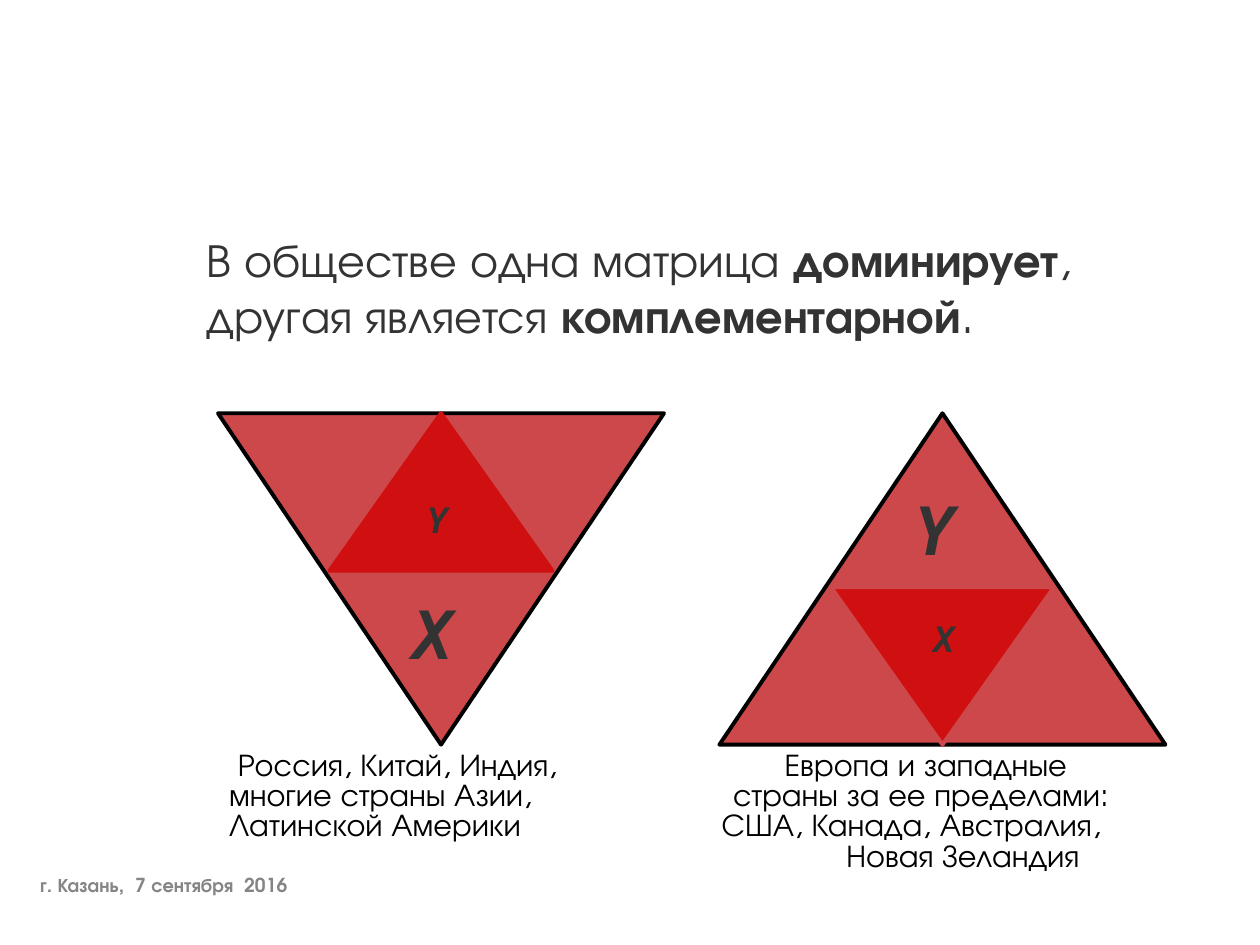
from pptx import Presentation
from pptx.dml.color import RGBColor
from pptx.enum import shapes, text
from pptx import util as u

BLACK = RGBColor(0x00, 0x00, 0x00)
CHARCOAL = RGBColor(0x33, 0x33, 0x33)
GREY = RGBColor(0x85, 0x85, 0x85)
ROSE = RGBColor(0xCC, 0x48, 0x4B)
RED = RGBColor(0xD0, 0x10, 0x10)

SANS = "TeX Gyre Adventor"
MONO = "DejaVu Sans Mono"


class SlideBuilder:
    """Places elements by shares of the slide: percent of width and height."""

    def __init__(self, deck):
        self.deck = deck
        self.page = deck.slides.add_slide(deck.slide_layouts[5])

    def area(self, left, top, width, height):
        across, down = self.deck.slide_width / 100, self.deck.slide_height / 100
        return [u.Emu(round(share * unit)) for share, unit in
                zip((left, top, width, height), (across, down, across, down))]

    def span(self, para, words, size, color, font=SANS, bold=False, italic=False):
        span = para.add_run()
        span.text = words
        span.font.name, span.font.size = font, u.Pt(size)
        span.font.bold, span.font.italic = bold, italic
        span.font.color.rgb = color

    def frame(self, shape, inset=0.1):
        frame = shape.text_frame
        frame.word_wrap = True
        frame.auto_size = text.MSO_AUTO_SIZE.NONE
        frame.vertical_anchor = text.MSO_ANCHOR.TOP
        frame.margin_left = frame.margin_right = u.Inches(inset)
        frame.margin_top = frame.margin_bottom = u.Inches(0.05)
        frame.paragraphs[0].alignment = text.PP_ALIGN.LEFT
        return frame

    def box(self, area, inset=0.1):
        return self.frame(self.page.shapes.add_textbox(*self.area(*area)), inset)

    def title(self, area, spans):
        title = self.page.shapes.title
        title.left, title.top, title.width, title.height = self.area(*area)
        para = self.frame(title).paragraphs[0]
        for words, bold in spans:
            self.span(para, words, 26.8, CHARCOAL, bold=bold)

    def shape(self, kind, area, fill, line):
        shape = self.page.shapes.add_shape(kind, *self.area(*area))
        shape.shadow.inherit = False
        shape.fill.solid()
        shape.fill.fore_color.rgb = fill
        shape.line.color.rgb = line
        shape.line.width = u.Pt(2.25)
        return shape

    def triangle(self, area, fill, line, inverted):
        triangle = self.shape(shapes.MSO_SHAPE.ISOSCELES_TRIANGLE, area, fill, line)
        triangle.rotation = 180 if inverted else 0

    def letter(self, frame, name, size):
        self.span(frame.paragraphs[0], name, size, CHARCOAL, MONO, True, True)

    def caption(self, area, lines):
        frame = self.box(area)
        for index, (indent, words) in enumerate(lines):
            para = frame.paragraphs[0] if index == 0 else frame.add_paragraph()
            para.line_spacing = 0.8
            para._p.get_or_add_pPr().set("marL", str(u.Inches(indent)))
            self.span(para, words, 18, BLACK)


# Matrix pairs: left edge, dominant and complementary letter, rim of the inner
# triangle, top of the dominant letter, offset and top of the small one
MATRICES = [
    (17.3, "X", "Y", RED, 62.13, 15.8, 52.1),
    (57.1, "Y", "X", ROSE, 51.07, 16.2, 64.7),
]
TOP, WIDTH, HEIGHT = 43.73, 35.4, 35.07
INNER_WIDTH, INNER_HEIGHT = WIDTH / 2, 16.67
LETTER_WIDTH, LETTER_HEIGHT = 5.9, 9.2

# Captions: left edge and lines with their indents in inches
CAPTIONS = [
    (17.2, [(0.07, "Россия, Китай, Индия,"),
            (0, "многие страны Азии,"),
            (0, "Латинской Америки")]),
    (56.3, [(0.5, "Европа и западные"),
            (0.09, "страны за ее пределами:"),
            (0, "США, Канада, Австралия,"),
            (0.99, "Новая Зеландия")]),
]


def main():
    deck = Presentation()
    deck.slide_width, deck.slide_height = u.Inches(10), u.Inches(7.5)
    slide = SlideBuilder(deck)

    # Statement
    slide.title((15.4, 23.73, 78, 12.53), [
        ("В обществе одна матрица ", False),
        ("доминирует", True),
        (", другая является ", False),
        ("комплементарной", True),
        (".", False),
    ])

    # Dominant matrix with the complementary one inside it
    for left, major, minor, rim, major_top, minor_shift, minor_top in MATRICES:
        inverted = major == "X"
        slide.triangle((left, TOP, WIDTH, HEIGHT), ROSE, BLACK, inverted)
        inner_top = TOP if inverted else TOP + HEIGHT - INNER_HEIGHT
        slide.triangle((left + WIDTH / 4, inner_top, INNER_WIDTH, INNER_HEIGHT),
                       RED, rim, not inverted)
        plate = slide.shape(
            shapes.MSO_SHAPE.RECTANGLE,
            (left + (WIDTH - LETTER_WIDTH) / 2, major_top, LETTER_WIDTH, LETTER_HEIGHT),
            ROSE, ROSE)
        slide.letter(slide.frame(plate, 0.08), major, 38)
        small = slide.box((left + minor_shift, minor_top, LETTER_WIDTH, 6), 0.08)
        slide.letter(small, minor, 20)

    # Captions
    for left, lines in CAPTIONS:
        slide.caption((left, 78.93, 36, 14.27), lines)

    # Place and date
    footer = slide.box((2.2, 91.73, 39.8, 6.67))
    slide.span(footer.paragraphs[0], "г. Казань,  7 сентября  2016", 11, GREY, bold=True)

    deck.save("out.pptx")


if __name__ == "__main__":
    main()
